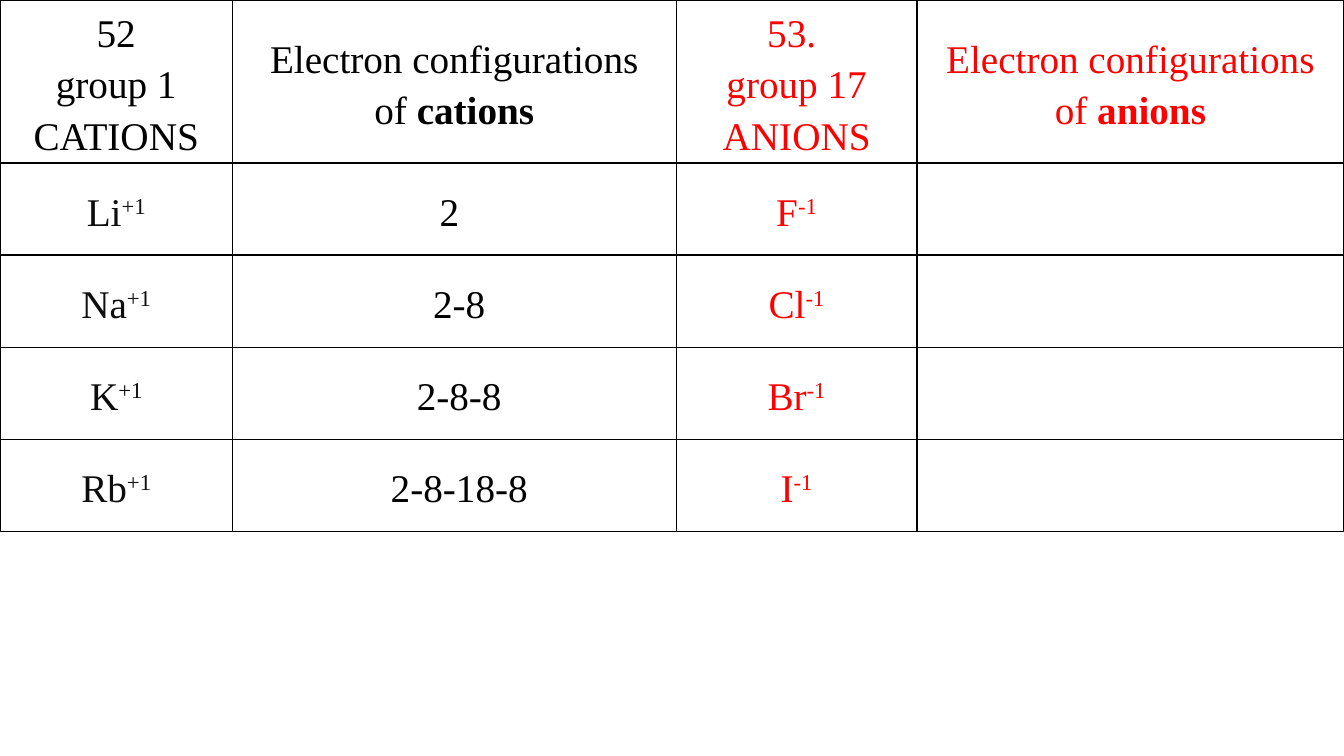
from lxml.etree import SubElement
from pptx import Presentation
from pptx.dml.color import RGBColor
from pptx.enum.text import MSO_ANCHOR, PP_ALIGN
from pptx.oxml.ns import qn
from pptx.util import Pt

BLACK, NEAR_BLACK, RED = "000000", "0D0D0D", "FF0000"


def add_text(paragraph, text, color=BLACK, bold=False, superscript=False):
    for index, line in enumerate(text.split("\n")):
        if index:
            paragraph.add_line_break()
        run = paragraph.add_run()
        run.text = line
        run.font.name = "Times New Roman"
        run.font.size = Pt(28)
        run.font.bold = bold
        run.font.color.rgb = RGBColor.from_string(color)
        if superscript:
            run.font._element.set("baseline", "30000")


def add_borders(cell, color=BLACK, width=Pt(1)):
    properties = cell._tc.get_or_add_tcPr()
    for position, side in enumerate(("lnL", "lnR", "lnT", "lnB")):
        border = SubElement(properties, qn(f"a:{side}"), w=str(width))
        fill = SubElement(border, qn("a:solidFill"))
        SubElement(fill, qn("a:srgbClr"), val=color)
        properties.insert(position, border)


presentation = Presentation()
presentation.slide_width, presentation.slide_height = Pt(960), Pt(540)
slide = presentation.slides.add_slide(presentation.slide_layouts[6])

# Table grid
column_widths = [166, 317, 172, 305]
row_heights = [91.5] + [65.8] * 4
table = slide.shapes.add_table(
    len(row_heights), len(column_widths), 0, 0, Pt(sum(column_widths)), Pt(sum(row_heights))
).table
table.first_row = table.horz_banding = False
for column, width in zip(table.columns, column_widths):
    column.width = Pt(width)
for row, height in zip(table.rows, row_heights):
    row.height = Pt(height)

for cell in table.iter_cells():
    cell.fill.background()
    add_borders(cell)
    cell.vertical_anchor = MSO_ANCHOR.MIDDLE
    cell.margin_left = cell.margin_right = cell.margin_top = cell.margin_bottom = Pt(2.9)
    paragraph = cell.text_frame.paragraphs[0]
    paragraph.alignment = PP_ALIGN.CENTER
    paragraph.line_spacing = 1.19

# Header row: plain text, bold ending, colour
headers = [
    ("52\ngroup 1 CATIONS", "", BLACK),
    ("Electron configurations\nof ", "cations", BLACK),
    ("53. \ngroup 17 ANIONS", "", RED),
    ("Electron configurations\nof ", "anions", RED),
]
for column, (text, bold_text, color) in enumerate(headers):
    cell = table.cell(0, column)
    paragraph = cell.text_frame.paragraphs[0]
    paragraph.space_after = Pt(6)
    add_text(paragraph, text, color=color)
    if bold_text:
        add_text(paragraph, bold_text, color=color, bold=True)
    else:
        cell.vertical_anchor = MSO_ANCHOR.TOP

# Ion rows: cation, its configuration, anion
ions = [
    ("Li", "2 ", "F"),
    ("Na", " 2-8", "Cl"),
    ("K", " 2-8-8", "Br"),
    ("Rb", " 2-8-18-8", "I"),
]
for row, (cation, configuration, anion) in enumerate(ions, start=1):
    for column, symbol, charge, color in ((0, cation, "+1", NEAR_BLACK), (2, anion, "-1", RED)):
        paragraph = table.cell(row, column).text_frame.paragraphs[0]
        add_text(paragraph, symbol, color=color)
        add_text(paragraph, charge, color=color, superscript=True)
    paragraph = table.cell(row, 1).text_frame.paragraphs[0]
    paragraph.space_after = Pt(6)
    add_text(paragraph, configuration)

presentation.save("out.pptx")
